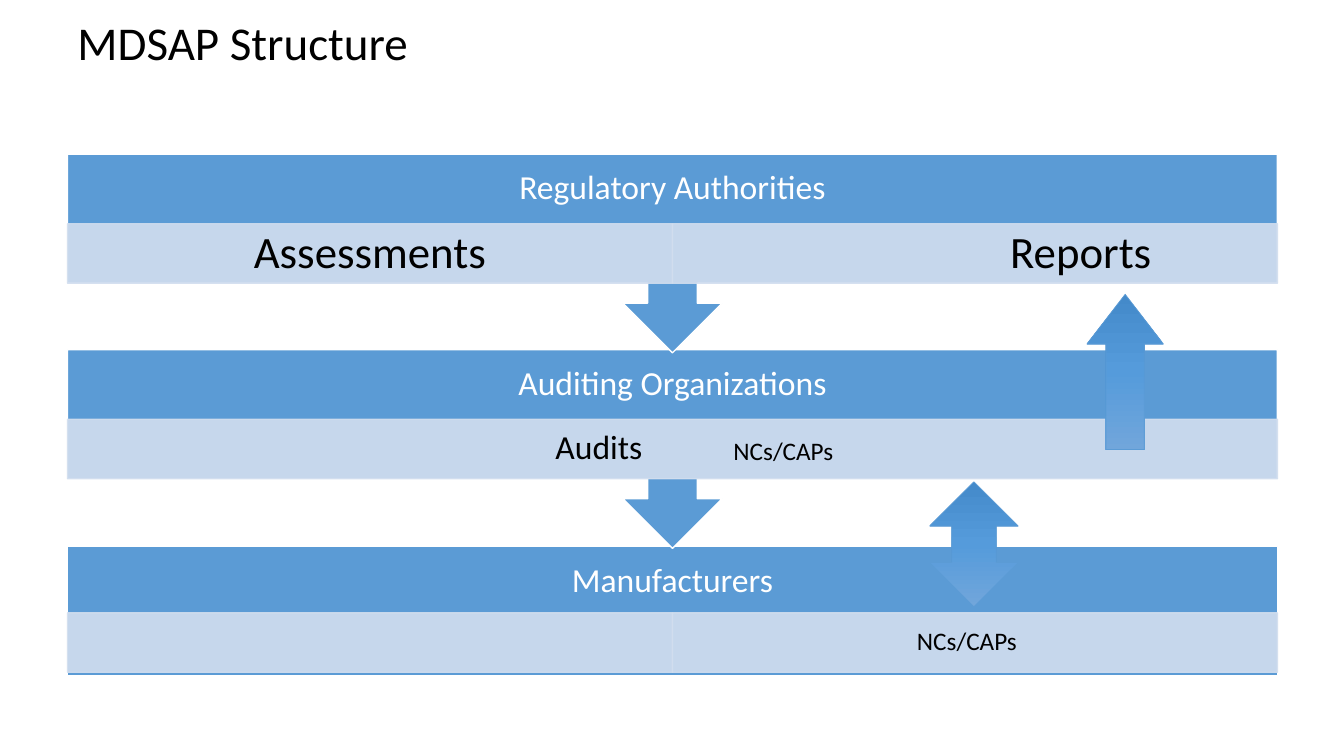
from lxml import etree
from pptx import Presentation
from pptx.dml.color import RGBColor
from pptx.enum import shapes, text
from pptx.oxml import ns
from pptx.util import Inches, Pt

COLORS = {"blue": "5B9BD5", "pale": "D2DEEF", "white": "FFFFFF", "black": "000000"}
ARROW_STOPS = [(0, "448ACA"), (50, "559BDB"), (100, "71A6DB")]
FONT = "Calibri"
LEFT, WIDTH = 0.67, 12
HEADER_HEIGHT, STRIP_HEIGHT = 0.69, 0.59
CALLOUT_HEIGHT, BOX_HEIGHT = 1.97, 1.28

# Heading, top, top of the strip, number of strip cells, has an arrow below
LEVELS = [
    ("Regulatory Authorities", 1.53, 2.22, 2, True),
    ("Auditing Organizations", 3.47, 4.16, 1, True),
    ("Manufacturers", 5.42, 6.08, 2, False),
]
# Label, centre, top, size
STRIP_LABELS = [
    ("Assessments", 3.67, 2.22, 32),
    ("Reports", 10.72, 2.22, 32),
    ("Audits", 5.94, 4.16, 24),
    ("NCs/CAPs", 7.77, 4.19, 18),
    ("NCs/CAPs", 9.59, 6.08, 18),
]


def add_block(slide, kind, left, top, width, height, fill, line, line_width=1):
    block = slide.shapes.add_shape(
        kind, Inches(left), Inches(top), Inches(width), Inches(height))
    block.shadow.inherit = False
    block.fill.solid()
    block.fill.fore_color.rgb = RGBColor.from_string(COLORS[fill])
    block.line.color.rgb = RGBColor.from_string(COLORS[line])
    block.line.width = Pt(line_width)
    return block


def add_label(slide, words, left, top, width, height, size, color,
              align=text.PP_ALIGN.CENTER):
    box = slide.shapes.add_textbox(
        Inches(left), Inches(top), Inches(width), Inches(height))
    frame = box.text_frame
    frame.word_wrap = True
    frame.vertical_anchor = text.MSO_ANCHOR.MIDDLE
    frame.margin_top = frame.margin_bottom = Inches(0.02)
    frame.text = words
    para = frame.paragraphs[0]
    para.alignment = align
    para.line_spacing = 0.9
    font = para.runs[0].font
    font.name = FONT
    font.size = Pt(size)
    font.color.rgb = RGBColor.from_string(COLORS[color])


def set_opacity(block, percent):
    for color in block._element.spPr.iter(ns.qn("a:srgbClr")):
        etree.SubElement(color, ns.qn("a:alpha"), val=str(percent * 1000))


def add_level(slide, heading, top, strip_top, cells, has_arrow):
    kind = shapes.MSO_SHAPE.DOWN_ARROW_CALLOUT if has_arrow else shapes.MSO_SHAPE.RECTANGLE
    height = CALLOUT_HEIGHT if has_arrow else BOX_HEIGHT
    add_block(slide, kind, LEFT, top, WIDTH, height, "blue", "white")
    add_label(slide, heading, LEFT, top, WIDTH, HEADER_HEIGHT, 24, "white")
    cell_width = WIDTH / cells
    for index in range(cells):
        cell = add_block(slide, shapes.MSO_SHAPE.RECTANGLE, LEFT + index * cell_width,
                         strip_top, cell_width, STRIP_HEIGHT, "pale", "pale")
        set_opacity(cell, 90)


def add_gradient_arrow(slide, kind, left, top, width, height):
    arrow = add_block(slide, kind, left, top, width, height, "blue", "blue", 0.5)
    solid = arrow._element.spPr.find(ns.qn("a:solidFill"))
    gradient = etree.Element(ns.qn("a:gradFill"), rotWithShape="1")
    stops = etree.SubElement(gradient, ns.qn("a:gsLst"))
    for position, color in ARROW_STOPS:
        stop = etree.SubElement(stops, ns.qn("a:gs"), pos=str(position * 1000))
        etree.SubElement(stop, ns.qn("a:srgbClr"), val=color)
    etree.SubElement(gradient, ns.qn("a:lin"), ang="5400000", scaled="0")
    solid.getparent().replace(solid, gradient)
    return arrow


def main():
    deck = Presentation()
    deck.slide_width, deck.slide_height = Inches(13.33), Inches(7.5)
    slide = deck.slides.add_slide(deck.slide_layouts[6])

    add_label(slide, "MDSAP Structure", LEFT, 0.18, WIDTH, 0.53, 33.6, "black",
              text.PP_ALIGN.LEFT)
    # Bottom level first, so each arrow tip lies over the level below it
    for level in reversed(LEVELS):
        add_level(slide, *level)
    for words, center, top, size in STRIP_LABELS:
        add_label(slide, words, center - 1.5, top, 3, STRIP_HEIGHT, size, "black")

    reports_arrow = add_gradient_arrow(
        slide, shapes.MSO_SHAPE.UP_ARROW, 10.78, 2.92, 0.76, 1.54)
    reports_arrow.adjustments[1] = 0.65
    add_gradient_arrow(slide, shapes.MSO_SHAPE.UP_DOWN_ARROW, 9.22, 4.78, 0.88, 1.24)
    deck.save("out.pptx")


if __name__ == "__main__":
    main()
